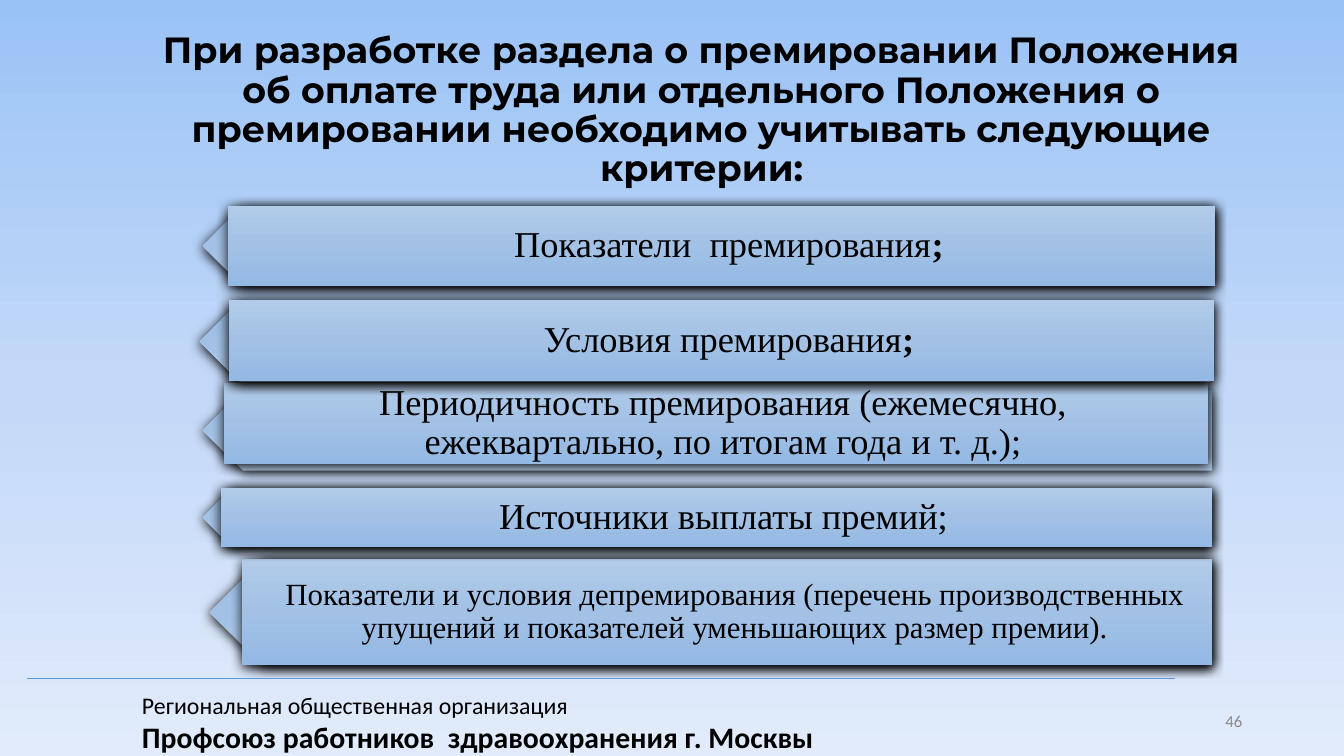
"""Builds a slide listing the criteria for a bonus policy as five stacked banners."""
from copy import deepcopy

from lxml import etree
from pptx import Presentation
from pptx.dml.color import RGBColor
from pptx.enum.shapes import MSO_CONNECTOR, MSO_SHAPE
from pptx.enum.text import MSO_ANCHOR, PP_ALIGN
from pptx.oxml import parse_xml
from pptx.util import Inches, Pt

BLACK = RGBColor(0x00, 0x00, 0x00)
GREY = RGBColor(0x8C, 0x8C, 0x8C)
RULE_BLUE = RGBColor(0x5B, 0x9B, 0xD5)
SKY = [RGBColor(0x9A, 0xC3, 0xF5), RGBColor(0xC2, 0xD8, 0xF8), RGBColor(0xE1, 0xEB, 0xFB)]
BANNER = [RGBColor(0xB1, 0xCB, 0xE9), RGBColor(0xA3, 0xC1, 0xE5), RGBColor(0x93, 0xB9, 0xE4)]
RECTANGLE, PENTAGON = MSO_SHAPE.RECTANGLE, MSO_SHAPE.PENTAGON
MIDDLE, TOP = MSO_ANCHOR.MIDDLE, MSO_ANCHOR.TOP
LEFT, CENTER, RIGHT = PP_ALIGN.LEFT, PP_ALIGN.CENTER, PP_ALIGN.RIGHT
NAMESPACE = "http://schemas.openxmlformats.org/drawingml/2006/main"
SHADOW = (
    f'<a:effectLst xmlns:a="{NAMESPACE}"><a:outerShdw blurRad="{{blur}}" dist="{{distance}}" '
    'dir="5400000" algn="ctr" rotWithShape="0"><a:srgbClr val="000000">'
    '<a:alpha val="{alpha}"/></a:srgbClr></a:outerShdw></a:effectLst>'
)


def fill_gradient(fill, element, colours):
    fill.gradient()
    fill.gradient_angle = 270
    stop_list = element.xpath(".//a:gsLst")[0]
    stop_list.insert(1, deepcopy(stop_list[0]))
    for index, (stop, colour) in enumerate(zip(fill.gradient_stops, colours)):
        stop.position = index / 2
        stop.color.rgb = colour


def format_text(shape, font_name, size, colour=BLACK, align=CENTER, anchor=MIDDLE):
    shape.text_frame.word_wrap = True
    shape.text_frame.vertical_anchor = anchor
    for paragraph in shape.text_frame.paragraphs:
        paragraph.alignment = align
        for run in paragraph.runs:
            run.font.name = font_name
            run.font.size = Pt(size)
            run.font.color.rgb = colour


presentation = Presentation()
presentation.slide_width = Inches(13.33)
presentation.slide_height = Inches(7.5)
slide = presentation.slides.add_slide(presentation.slide_layouts[5])
fill_gradient(slide.background.fill, slide.element, SKY)

title = slide.shapes.title
title.left, title.top, title.width, title.height = map(Inches, (1.38, 0.29, 11.16, 1.62))
title.text_frame.text = (
    "При разработке раздела о премировании Положения об оплате труда или отдельного "
    "Положения о премировании необходимо учитывать следующие критерии:"
)
format_text(title, "Montserrat", 26)
title.text_frame.paragraphs[0].line_spacing = 0.9
title.text_frame.paragraphs[0].runs[0].font.bold = True

criteria = [
    ("Показатели и условия депремирования (перечень производственных упущений "
     "и показателей уменьшающих размер премии).", "", 22,
     (2.08, 5.55, 9.94, 1.05), (2.4, 5.55, 9.62, 1.05)),
    ("Источники выплаты премий;", "", 26,
     (2.01, 4.84, 10.01, 0.59), (2.19, 4.84, 9.83, 0.59)),
    ("Периодичность премирования (ежемесячно, ежеквартально, по итогам года и т. д.);", "", 26,
     (2.01, 3.87, 10.01, 0.8), (2.22, 3.8, 9.76, 0.8)),
    ("Условия премирования", ";", 26,
     (1.98, 2.99, 10.02, 0.8), (2.27, 2.98, 9.77, 0.8)),
    ("Показатели  премирования", ";", 26,
     (2.01, 2.04, 10.04, 0.8), (2.26, 2.04, 9.79, 0.8)),
]
for wording, bold_ending, size, arrow_box, banner_box in criteria:
    arrow = slide.shapes.add_shape(PENTAGON, *map(Inches, arrow_box))
    arrow.rotation = 180
    banner = slide.shapes.add_shape(RECTANGLE, *map(Inches, banner_box))
    for shape in (arrow, banner):
        fill_gradient(shape.fill, shape.element, BANNER)
        shape.line.fill.background()
        shape.shadow.inherit = False
        effects = shape.element.xpath("./p:spPr/a:effectLst")[0]
        shadow = parse_xml(SHADOW.format(blur=Pt(8.5), distance=Pt(1), alpha=100000))
        effects.append(shadow[0])
    text_frame = banner.text_frame
    text_frame.margin_left, text_frame.margin_right = Inches(0.35), Inches(0.2)
    text_frame.margin_top = text_frame.margin_bottom = Inches(0.1)
    text_frame.text = wording
    paragraph = text_frame.paragraphs[0]
    paragraph.line_spacing = 0.9
    if bold_ending:
        ending = paragraph.add_run()
        ending.text = bold_ending
        ending.font.bold = True
    format_text(banner, "Times New Roman", size)

footer = slide.shapes.add_textbox(*map(Inches, (1.31, 6.8, 10.41, 0.78)))
footer.text_frame.text = (
    "Региональная общественная организация\nПрофсоюз работников  здравоохранения г. Москвы"
)
format_text(footer, "Calibri", 17, align=LEFT, anchor=TOP)
organisation = footer.text_frame.paragraphs[1].runs[0]
organisation.font.size = Pt(21.2)
organisation.font.bold = True
for text_fill in footer.element.xpath(".//a:rPr/a:solidFill"):
    text_fill.addnext(parse_xml(SHADOW.format(blur=Pt(3), distance=Pt(3), alpha=40000)))

rule = slide.shapes.add_connector(
    MSO_CONNECTOR.STRAIGHT, Inches(0.27), Inches(6.73), Inches(11.65), Inches(6.73)
)
rule.line.color.rgb = RULE_BLUE
rule.line.width = Pt(0.5)
etree.SubElement(rule.element.spPr, f"{{{NAMESPACE}}}effectLst")

slide_number = slide.shapes.add_textbox(*map(Inches, (9.42, 6.95, 3, 0.4)))
slide_number.text_frame.text = "46"
format_text(slide_number, "Calibri", 12, GREY, RIGHT)

presentation.save("out.pptx")
